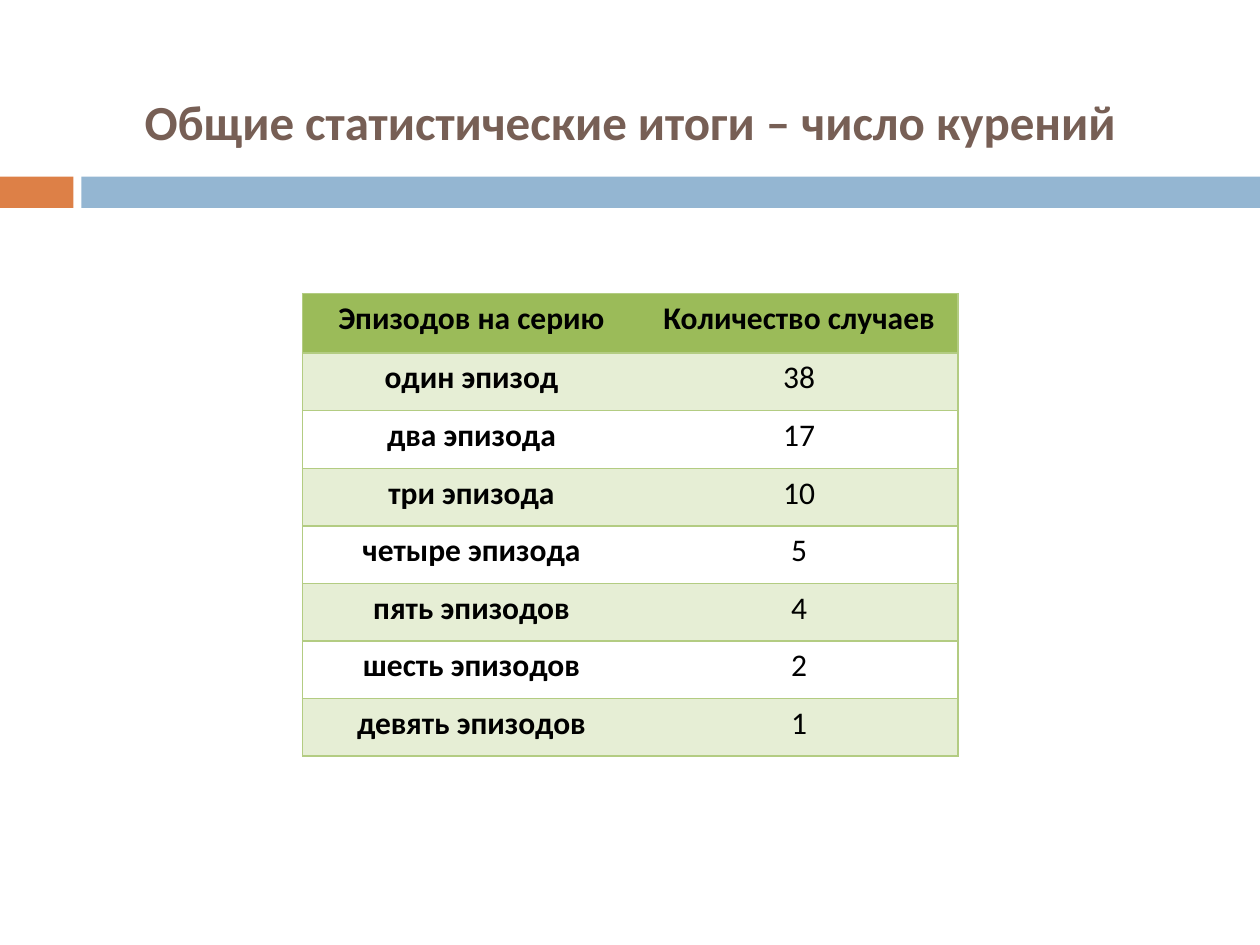
"""Build a slide with a table of smoking episodes per series."""
from lxml import etree
from pptx import Presentation
from pptx.dml.color import RGBColor
from pptx.enum import shapes, text
from pptx.oxml.ns import qn
from pptx.util import Cm, Pt

TITLE = "Общие статистические итоги – число курений"
ROWS = [
    ("Эпизодов на серию", "Количество случаев"),
    ("один эпизод", "38"),
    ("два эпизода", "17"),
    ("три эпизода", "10"),
    ("четыре эпизода", "5"),
    ("пять эпизодов", "4"),
    ("шесть эпизодов", "2"),
    ("девять эпизодов", "1"),
]
FONT = "Calibri"
BROWN = RGBColor(0x77, 0x5F, 0x55)
BLACK = RGBColor(0, 0, 0)
ORANGE = RGBColor(0xDD, 0x80, 0x47)
BLUE = RGBColor(0x94, 0xB6, 0xD2)
HEADER_GREEN = RGBColor(0x9B, 0xBB, 0x59)
BAND_GREEN = RGBColor(0xE6, 0xEE, 0xD5)
BORDER_GREEN = RGBColor(0xB3, 0xCC, 0x82)

SLIDE_WIDTH, SLIDE_HEIGHT = 25.4, 19.05
BARS = [(0, 1.48, ORANGE), (1.64, SLIDE_WIDTH - 1.64, BLUE)]
BAR_TOP, BAR_HEIGHT = 3.56, 0.63
TABLE_LEFT, TABLE_TOP = 6.1, 5.92
COLUMN_WIDTHS = [6.81, 6.4]
HEADER_HEIGHT, ROW_HEIGHT = 1.2, 1.16


def style_paragraph(paragraph, size, color, bold):
    paragraph.alignment = text.PP_ALIGN.CENTER
    font = paragraph.font
    font.name, font.size, font.bold = FONT, Pt(size), bold
    font.color.rgb = color


def set_borders(cell, visible_sides):
    properties = cell._tc.get_or_add_tcPr()
    for index, side in enumerate("LRTB"):
        line = etree.Element(qn(f"a:ln{side}"), w=str(Pt(1)))
        properties.insert(index, line)
        if side in visible_sides:
            fill = etree.SubElement(line, qn("a:solidFill"))
            etree.SubElement(fill, qn("a:srgbClr"), val=str(BORDER_GREEN))
        else:
            etree.SubElement(line, qn("a:noFill"))


def add_bars(slide):
    for left, width, color in BARS:
        bar = slide.shapes.add_shape(
            shapes.MSO_SHAPE.RECTANGLE,
            Cm(left), Cm(BAR_TOP), Cm(width), Cm(BAR_HEIGHT))
        bar.shadow.inherit = False
        bar.fill.solid()
        bar.fill.fore_color.rgb = color
        bar.line.fill.background()


def add_title(slide):
    box = slide.shapes.add_textbox(Cm(1.27), Cm(0.76), Cm(22.86), Cm(3.35))
    frame = box.text_frame
    frame.word_wrap = True
    frame.vertical_anchor = text.MSO_ANCHOR.MIDDLE
    frame.text = TITLE
    style_paragraph(frame.paragraphs[0], 28, BROWN, True)


def fill_cell(cell, value, row, column):
    cell.text = value
    cell.margin_left = cell.margin_right = Cm(0.18)
    cell.margin_top = cell.margin_bottom = 0
    paragraph = cell.text_frame.paragraphs[0]
    paragraph.line_spacing = 1.15
    style_paragraph(paragraph, 18, BLACK, row == 0 or column == 0)
    if row == 0 or row % 2:
        cell.fill.solid()
        cell.fill.fore_color.rgb = BAND_GREEN if row else HEADER_GREEN
    else:
        cell.fill.background()
    set_borders(cell, "RTB" if column else "LTB")


def add_table(slide):
    heights = [HEADER_HEIGHT] + [ROW_HEIGHT] * (len(ROWS) - 1)
    table = slide.shapes.add_table(
        len(ROWS), len(COLUMN_WIDTHS), Cm(TABLE_LEFT), Cm(TABLE_TOP),
        Cm(sum(COLUMN_WIDTHS)), Cm(sum(heights))).table
    for column, width in zip(table.columns, COLUMN_WIDTHS):
        column.width = Cm(width)
    for row, (values, height) in enumerate(zip(ROWS, heights)):
        table.rows[row].height = Cm(height)
        for column, value in enumerate(values):
            fill_cell(table.cell(row, column), value, row, column)


def main():
    presentation = Presentation()
    presentation.slide_width = Cm(SLIDE_WIDTH)
    presentation.slide_height = Cm(SLIDE_HEIGHT)
    slide = presentation.slides.add_slide(presentation.slide_layouts[6])
    add_bars(slide)
    add_title(slide)
    add_table(slide)
    presentation.save("out.pptx")


if __name__ == "__main__":
    main()
